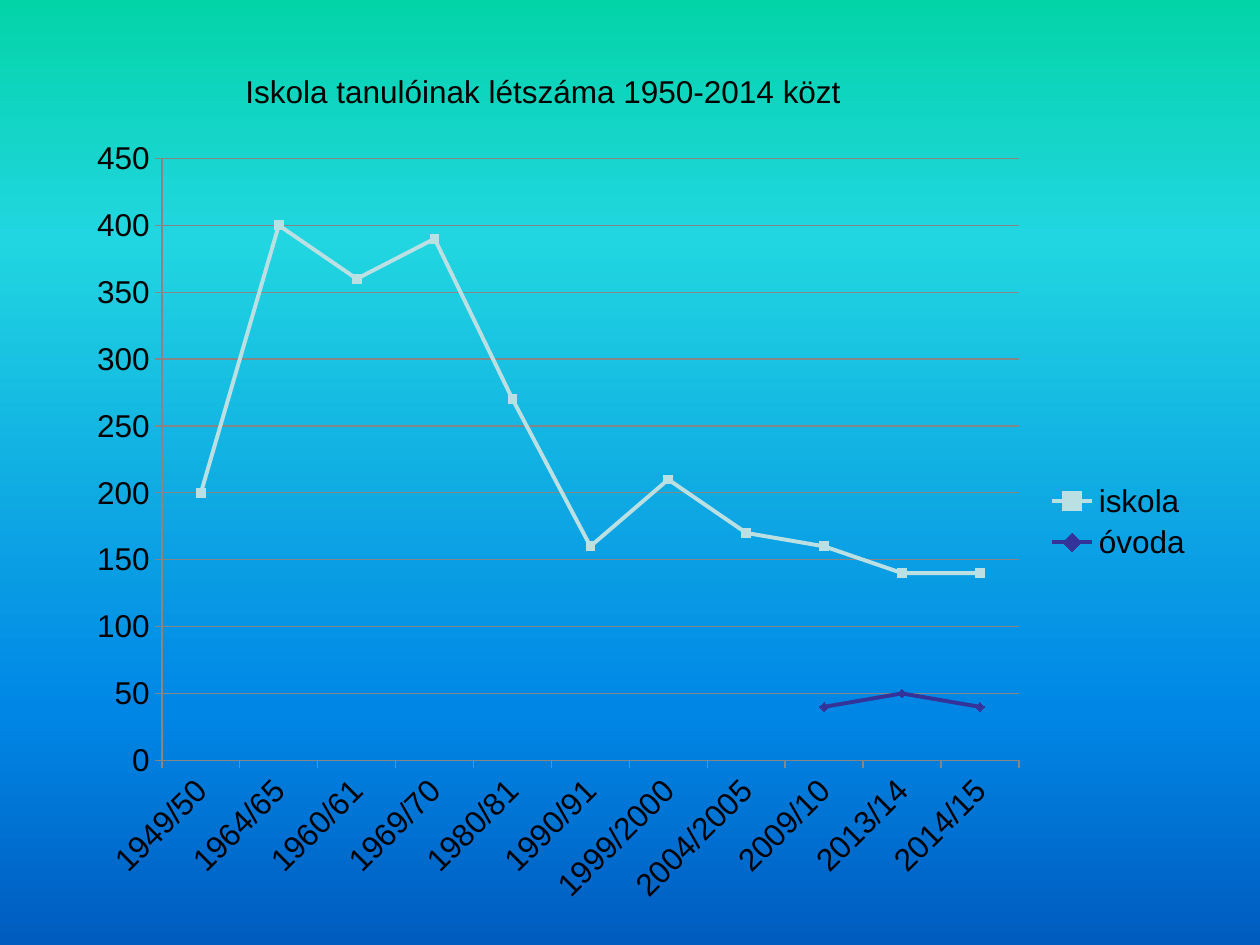
from lxml.etree import SubElement
from pptx import Presentation
from pptx.chart.data import CategoryChartData
from pptx.dml.color import RGBColor
from pptx.enum.chart import (XL_CHART_TYPE as ChartType, XL_LEGEND_POSITION as LegendSide,
                             XL_MARKER_STYLE as Marker, XL_TICK_MARK as Tick)
from pptx.enum.text import MSO_AUTO_SIZE as AutoSize
from pptx.oxml.ns import qn
from pptx.util import Pt

PX = 914400 / 126
FONT = "Arial"
BLACK, GRID = "000000", "868686"
BACKDROP = [(0, "03D4A8"), (25, "21D6E0"), (75, "0087E6"), (100, "005CBF")]
YEARS = ["1949/50", "1964/65", "1960/61", "1969/70", "1980/81", "1990/91",
         "1999/2000", "2004/2005", "2009/10", "2013/14", "2014/15"]
SERIES = [
    ("iskola", [200, 400, 360, 390, 270, 160, 210, 170, 160, 140, 140],
     "BBE0E3", Marker.SQUARE),
    ("óvoda", [None] * 8 + [40, 50, 40], "333399", Marker.DIAMOND),
]


def px(*lengths):
    return [round(length * PX) for length in lengths]


def color(value):
    return RGBColor.from_string(value)


def style_font(font):
    font.name, font.size = FONT, Pt(18)
    font.color.rgb = color(BLACK)


def style_line(line, value, width):
    line.color.rgb = color(value)
    line.width = Pt(width)


def paint_background(page, stops):
    fill = page.background.fill
    fill.gradient()
    fill.gradient_angle = 270
    stop_list = page.element.xpath(".//a:gsLst")[0]
    for old in list(stop_list):
        stop_list.remove(old)
    for percent, value in stops:
        stop = SubElement(stop_list, qn("a:gs"), pos=str(percent * 1000))
        SubElement(stop, qn("a:srgbClr"), val=value)


def pin(element, percents, place, target=None):
    """Fix a chart part at a box given in percent of the chart."""
    for old in element.findall(qn("c:layout")):
        element.remove(old)
    layout = SubElement(element, qn("c:layout"))
    manual = SubElement(layout, qn("c:manualLayout"))
    if target:
        SubElement(manual, qn("c:layoutTarget"), val=target)
    for name in ("xMode", "yMode"):
        SubElement(manual, qn(f"c:{name}"), val="edge")
    for name, percent in zip("xywh", percents):
        SubElement(manual, qn(f"c:{name}"), val=f"{percent / 100:.4f}")
    element.insert(place, layout)


def add_line_chart(page, left, top, width, height):
    data = CategoryChartData()
    data.categories = YEARS
    for name, values, *_ in SERIES:
        data.add_series(name, values)
    frame = page.shapes.add_chart(ChartType.LINE_MARKERS, *px(left, top, width, height), data)
    chart = frame.chart
    chart.has_title = False
    style_font(chart.font)

    # Series
    plot = chart.plots[0]
    plot.vary_by_categories = False
    for series, (_, _, value, marker) in zip(plot.series, SERIES):
        series.smooth = False
        style_line(series.format.line, value, 2.25)
        series.marker.style, series.marker.size = marker, 5
        series.marker.format.fill.solid()
        series.marker.format.fill.fore_color.rgb = color(value)
        style_line(series.marker.format.line, value, 0.75)

    # Axes
    for axis in (chart.category_axis, chart.value_axis):
        axis.major_tick_mark, axis.minor_tick_mark = Tick.OUTSIDE, Tick.NONE
        style_line(axis.format.line, GRID, 0.75)
        style_font(axis.tick_labels.font)
    chart.category_axis.has_major_gridlines = False
    turn = chart.element.xpath(".//c:catAx/c:txPr/a:bodyPr")[0]
    turn.set("rot", "-2700000")
    scale = chart.value_axis
    scale.minimum_scale, scale.maximum_scale, scale.major_unit = 0, 450, 50
    scale.has_major_gridlines = True
    style_line(scale.major_gridlines.format.line, GRID, 0.75)

    # Legend and plot area
    chart.has_legend = True
    legend = chart.legend
    legend.position, legend.include_in_layout = LegendSide.RIGHT, False
    style_font(legend.font)
    area = chart.element.xpath(".//c:plotArea")[0]
    pin(area, (7.78, 4.22, 75.77, 75.82), 0, "inner")
    key = chart.element.xpath(".//c:legend")[0]
    pin(key, (85.94, 44.46, 12.82, 11.08), 1)


def add_heading(page, left, top, width, height):
    box = page.shapes.add_textbox(*px(left, top, width, height))
    box.text_frame.word_wrap = True
    box.text_frame.auto_size = AutoSize.SHAPE_TO_FIT_TEXT
    para = box.text_frame.paragraphs[0]
    span = para.add_run()
    span.text = "Iskola tanulóinak létszáma 1950-2014 közt"
    style_font(span.font)


def main():
    deck = Presentation()
    deck.slide_width, deck.slide_height = px(1260, 945)
    page = deck.slides.add_slide(deck.slide_layouts[6])
    paint_background(page, BACKDROP)
    add_line_chart(page, 74, 125, 1131, 794)
    add_heading(page, 233, 66, 714, 50)
    deck.save("out.pptx")


if __name__ == "__main__":
    main()
